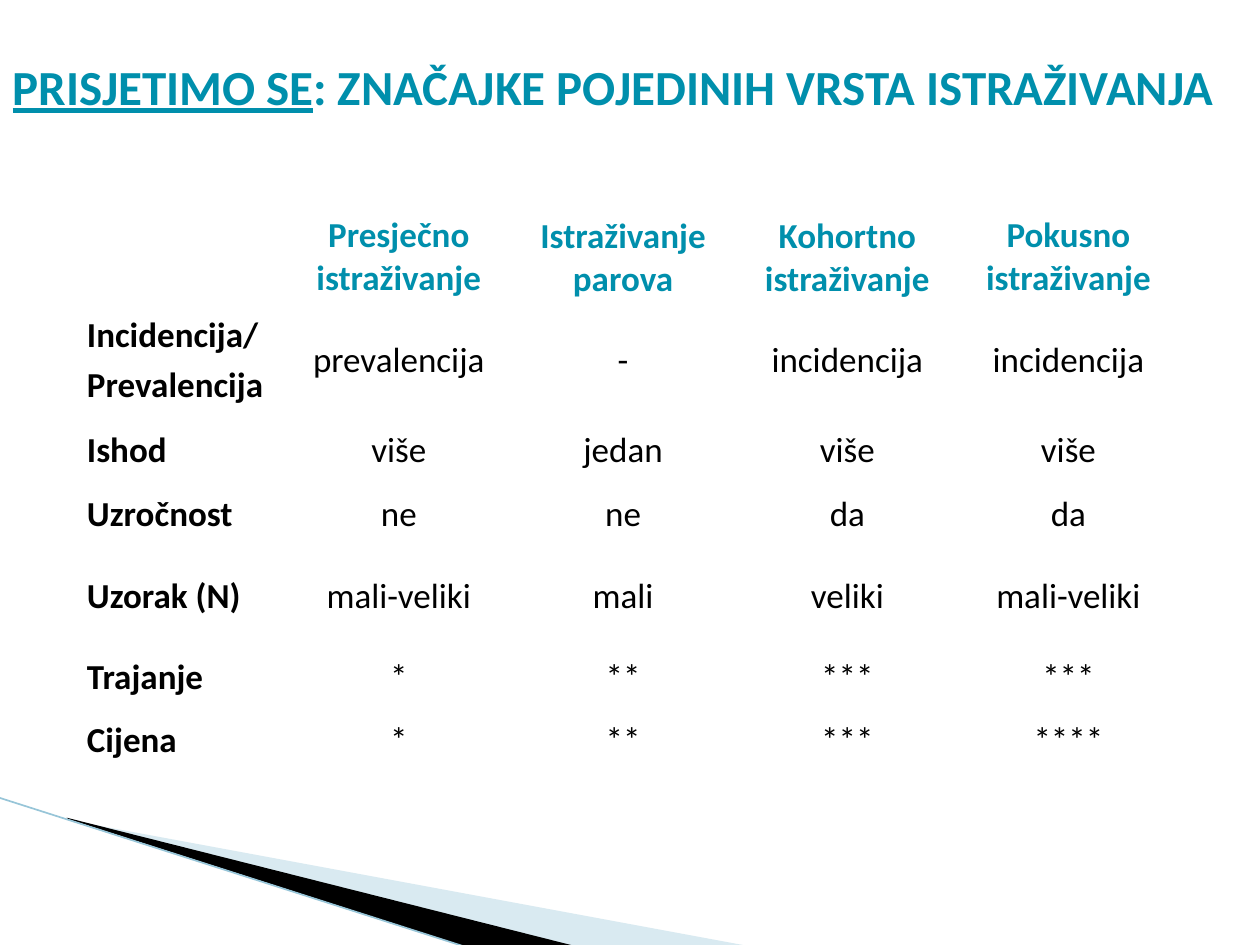
from lxml.etree import SubElement
from pptx import Presentation
from pptx.dml.color import RGBColor
from pptx.enum.shapes import MSO_CONNECTOR as Connector
from pptx.enum.text import MSO_ANCHOR as Anchor, MSO_AUTO_SIZE as AutoSize, PP_ALIGN as Align
from pptx.oxml.ns import qn
from pptx.util import Inches, Pt

TEAL, BLACK, WHITE = "008FAC", "000000", "FFFFFF"
PALE_BLUE, LINE_BLUE = "A0CBDC", "97C5D8"

HEADINGS = ["", "Presječno istraživanje", "Istraživanje parova",
            "Kohortno istraživanje", "Pokusno istraživanje"]
FEATURES = [
    ["Incidencija/\nPrevalencija", "prevalencija", "-", "incidencija", "incidencija"],
    ["Ishod", "više", "jedan", "više", "više"],
    ["Uzročnost", "ne", "ne", "da", "da"],
    ["Uzorak (N)", "mali-veliki", "mali", "veliki", "mali-veliki"],
    ["Trajanje", "*", "**", "***", "***"],
    ["Cijena", "*", "**", "***", "****"],
]
COLUMN_WIDTHS = [1.7, 1.75, 1.81, 1.75, 1.76]
ROW_HEIGHTS = [0.74, 0.9, 0.52, 0.5, 0.8, 0.49, 0.51]


def color(code):
    return RGBColor.from_string(code)


def apply(target, values):
    for name, value in values.items():
        setattr(target, name, value)


class StudySlide:
    font_name = "Calibri"
    title_size = Pt(28)
    cell_size = Pt(20)
    cell_format = {"margin_left": Inches(0.1), "margin_right": Inches(0.1),
                   "margin_top": 0, "margin_bottom": Inches(0.05)}

    def __init__(self, deck):
        self.slide = deck.slides.add_slide(deck.slide_layouts[5])
        background = self.slide.background.fill
        background.solid()
        background.fore_color.rgb = color(WHITE)

    def style(self, font, size, code, bold):
        apply(font, {"name": self.font_name, "size": size, "bold": bold})
        font.color.rgb = color(code)

    def wedge(self, points, code, opacity=100):
        corners = [(Inches(x), Inches(y)) for x, y in points]
        builder = self.slide.shapes.build_freeform(*corners[0])
        builder.add_line_segments(corners[1:], close=True)
        shape = builder.convert_to_shape()
        shape.shadow.inherit = False
        shape.fill.solid()
        shape.fill.fore_color.rgb = color(code)
        shape.line.fill.background()
        if opacity < 100:
            fill = shape.fill._xPr.find(qn("a:solidFill"))
            SubElement(fill[0], qn("a:alpha"), val=str(opacity * 1000))

    def line(self, start, end, code, width):
        ends = [Inches(value) for value in (*start, *end)]
        edge = self.slide.shapes.add_connector(Connector.STRAIGHT, *ends)
        edge.line.color.rgb = color(code)
        edge.line.width = Pt(width)
        SubElement(edge._element.spPr, qn("a:effectLst"))

    def title(self, underlined, rest):
        heading = self.slide.shapes.title
        apply(heading, {"left": 0, "top": 0, "width": Inches(10), "height": Inches(1.37)})
        apply(heading.text_frame, {"word_wrap": True, "auto_size": AutoSize.NONE,
                                   "vertical_anchor": Anchor.MIDDLE})
        paragraph = heading.text_frame.paragraphs[0]
        paragraph.alignment = Align.LEFT
        for text, underline in ((underlined, True), (rest, False)):
            run = paragraph.add_run()
            run.text = text
            self.style(run.font, self.title_size, TEAL, True)
            run.font.underline = underline

    def border(self, cell, side, width):
        properties = cell._tc.get_or_add_tcPr()
        edge = SubElement(properties, qn(f"a:{side}"), w=str(Pt(width)))
        fill = SubElement(edge, qn("a:solidFill"))
        SubElement(fill, qn("a:srgbClr"), val=WHITE)

    def cell(self, cell, text, align, anchor, code, bold, bottom):
        apply(cell, {**self.cell_format, "vertical_anchor": anchor, "text": text})
        self.border(cell, "lnT", 2.25)
        self.border(cell, "lnB", bottom)
        cell.fill.background()
        for index, paragraph in enumerate(cell.text_frame.paragraphs):
            paragraph.alignment = align
            if index:
                paragraph.space_before = Pt(4)
            for run in paragraph.runs:
                self.style(run.font, self.cell_size, code, bold)

    def table(self, left, top, rows):
        width, height = sum(COLUMN_WIDTHS), sum(ROW_HEIGHTS)
        table = self.slide.shapes.add_table(
            len(rows), len(COLUMN_WIDTHS),
            Inches(left), Inches(top), Inches(width), Inches(height)).table
        apply(table, {"first_row": False, "horz_banding": False})
        for column, size in zip(table.columns, COLUMN_WIDTHS):
            column.width = Inches(size)
        for row, size in zip(table.rows, ROW_HEIGHTS):
            row.height = Inches(size)
        for r, values in enumerate(rows):
            for c, text in enumerate(values):
                self.cell(
                    table.cell(r, c), text,
                    align=Align.CENTER if c else Align.LEFT,
                    anchor=Anchor.TOP if r == 0 and c in (0, 1, 4) else Anchor.MIDDLE,
                    code=BLACK if r else TEAL,
                    bold=r == 0 or c == 0,
                    bottom=3 if r == len(rows) - 1 else 2.25)


def main():
    deck = Presentation()
    apply(deck, {"slide_width": Inches(10), "slide_height": Inches(7.5)})
    study = StudySlide(deck)
    study.wedge([(0.55, 6.51), (5.95, 7.51), (4.56, 7.51), (0.55, 6.5)], PALE_BLUE, 40)
    study.wedge([(0.53, 6.49), (4.57, 7.51), (3.72, 7.52), (0.54, 6.5)], BLACK)
    study.line((-0.01, 6.33), (3.71, 7.52), LINE_BLUE, 0.95)
    study.title("PRISJETIMO SE", ": ZNAČAJKE POJEDINIH VRSTA ISTRAŽIVANJA")
    study.table(0.59, 1.7, [HEADINGS, *FEATURES])
    deck.save("out.pptx")


if __name__ == "__main__":
    main()
